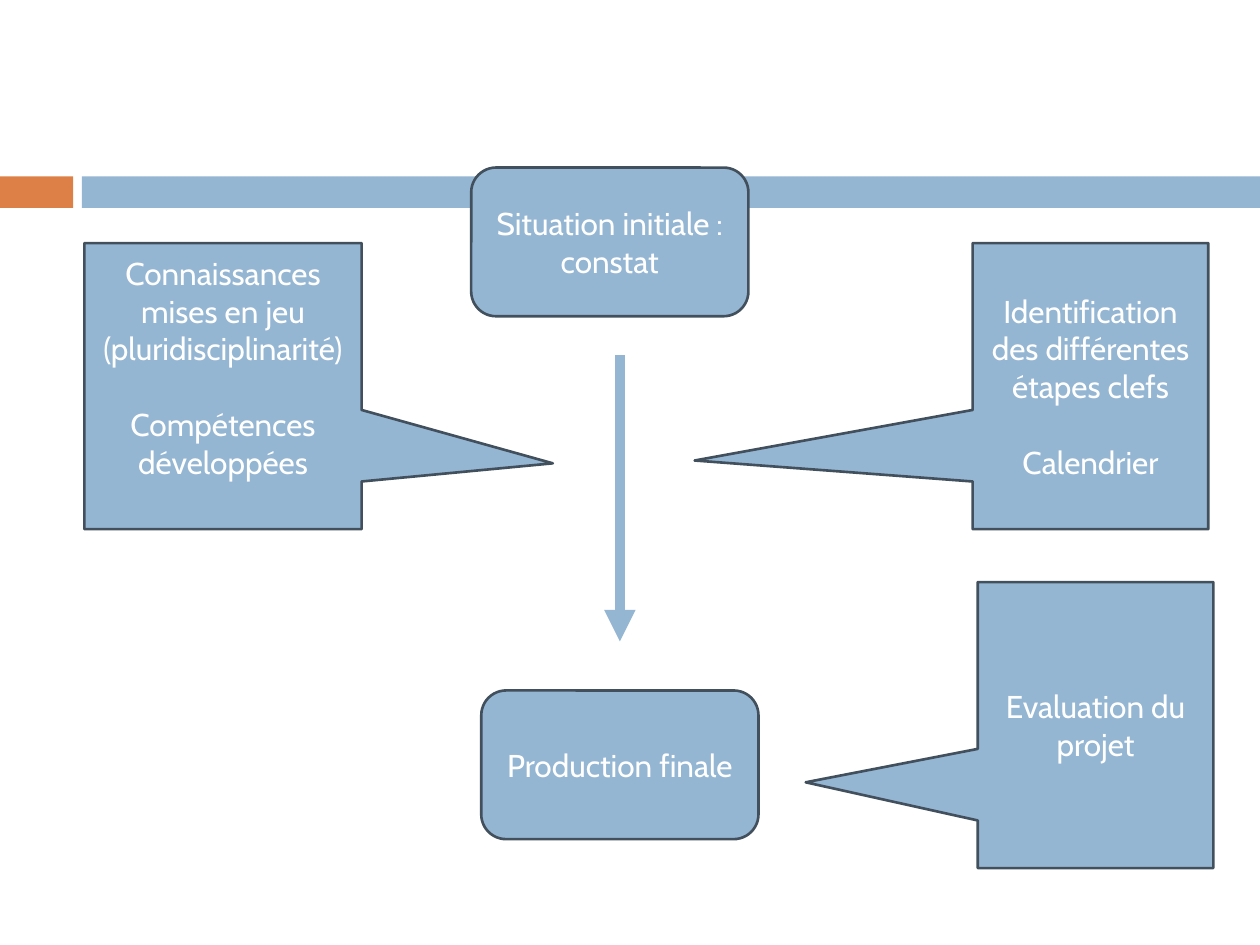
from lxml import etree
from pptx import Presentation
from pptx.dml.color import RGBColor
from pptx.enum.shapes import MSO_CONNECTOR, MSO_SHAPE
from pptx.enum.text import MSO_ANCHOR, PP_ALIGN
from pptx.oxml.ns import qn
from pptx.util import Inches, Pt

RECT = MSO_SHAPE.RECTANGLE
ROUNDED = MSO_SHAPE.ROUNDED_RECTANGLE
CALLOUT = MSO_SHAPE.RECTANGULAR_CALLOUT
STRAIGHT = MSO_CONNECTOR.STRAIGHT
CENTER = PP_ALIGN.CENTER
MIDDLE = MSO_ANCHOR.MIDDLE

BLUE, ORANGE, OUTLINE, WHITE = "94B6D2", "DD8047", "41505C", "FFFFFF"
FONT, SIZE = "Cabin", 18
LINE_PT = 1.2 * SIZE  # height of one text line

# left, width, colour
BAND_TOP, BAND_HEIGHT = 1.4, 0.25
BANDS = [(0, 0.58, ORANGE), (0.65, 9.35, BLUE)]

# left, top, paragraphs
STEP_SIZE = (2.2, 1.18)
STEPS = [
    (3.82, 5.48, ["Production finale"]),
    (3.74, 1.33, ["Situation initiale :", "constat"]),
]

ARROW = (4.92, 2.82, 4.92, 5.09)

# left, top, width, pointer offset, groups of paragraphs, free lines below
CALLOUT_HEIGHT = 2.27
CALLOUTS = [
    (7.72, 1.93, 1.87, (-1.68, 0.26),
     [["Identification des différentes étapes clefs"], ["Calendrier"]], 0),
    (0.67, 1.93, 2.2, (1.19, 0.27),
     [["Connaissances mises en jeu", "(pluridisciplinarité)"],
      ["Compétences développées"]], 1),
    (7.76, 4.62, 1.87, (-1.23, 0.2), [["Evaluation du projet"]], 0),
]


def rgb(value):
    return RGBColor.from_string(value)


def add_box(slide, kind, box, fill, line=None):
    sp = slide.shapes.add_shape(kind, *(Inches(v) for v in box))
    sp.shadow.inherit = False
    sp.fill.solid()
    sp.fill.fore_color.rgb = rgb(fill)
    if line:
        sp.line.color.rgb = rgb(line)
        sp.line.width = Pt(1.5)
    else:
        sp.line.fill.background()
    return sp


def write(sp, groups, size=SIZE, color=WHITE, free_lines=0):
    """Centre groups of paragraphs, one line apart, above any free lines."""
    tf = sp.text_frame
    tf.word_wrap = True
    tf.vertical_anchor = MIDDLE
    tf.margin_bottom = Inches(0.05) + Pt(free_lines * LINE_PT)
    p = None
    for group in groups:
        for i, text in enumerate(group):
            first = p is None
            p = tf.paragraphs[0] if first else tf.add_paragraph()
            p.alignment = CENTER
            if i == 0 and not first:
                p.space_before = Pt(LINE_PT)
            r = p.add_run()
            r.text = text
            r.font.name = FONT
            r.font.size = Pt(size)
            r.font.color.rgb = rgb(color)


def add_arrow(slide, ends, color, width):
    line = slide.shapes.add_connector(STRAIGHT, *(Inches(v) for v in ends))
    line.line.color.rgb = rgb(color)
    line.line.width = Pt(width)
    sp_pr = line._element.spPr
    etree.SubElement(sp_pr.find(qn("a:ln")), qn("a:tailEnd"), type="triangle")
    etree.SubElement(sp_pr, qn("a:effectLst"))


def main():
    prs = Presentation()
    prs.slide_width, prs.slide_height = Inches(10), Inches(7.5)
    slide = prs.slides.add_slide(prs.slide_layouts[6])

    for left, width, color in BANDS:
        add_box(slide, RECT, (left, BAND_TOP, width, BAND_HEIGHT), color)

    for left, top, lines in STEPS:
        sp = add_box(slide, ROUNDED, (left, top, *STEP_SIZE), BLUE, OUTLINE)
        write(sp, [lines])

    add_arrow(slide, ARROW, BLUE, 6)

    for left, top, width, pointer, groups, free_lines in CALLOUTS:
        box = (left, top, width, CALLOUT_HEIGHT)
        sp = add_box(slide, CALLOUT, box, BLUE, OUTLINE)
        sp.adjustments[0], sp.adjustments[1] = pointer
        write(sp, groups, free_lines=free_lines)

    prs.save("out.pptx")


if __name__ == "__main__":
    main()
